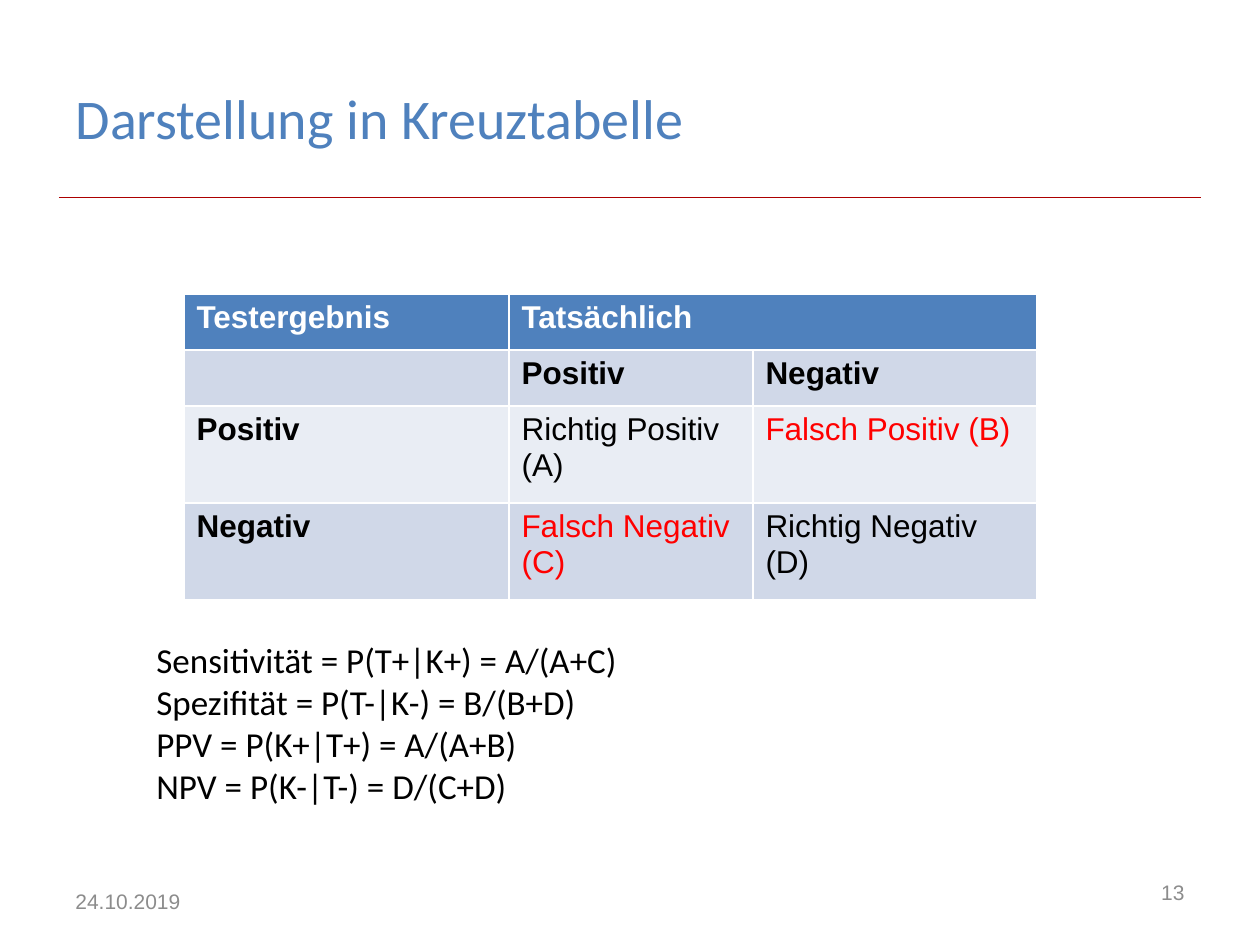
from dataclasses import dataclass

from lxml.etree import SubElement
from pptx import Presentation
from pptx.dml.color import RGBColor as Color
from pptx.enum.shapes import MSO_CONNECTOR as Connector
from pptx.enum.text import MSO_ANCHOR as Anchor, MSO_AUTO_SIZE as AutoSize, PP_ALIGN as Align
from pptx.oxml.ns import qn
from pptx.util import Emu, Pt


@dataclass(frozen=True)
class Theme:
    """Colours, fonts and type sizes of the slide."""
    accent: str = "4F81BD"
    rule: str = "AC0000"
    muted: str = "8C8C8C"
    text: str = "000000"
    inverse: str = "FFFFFF"
    error: str = "FF0000"
    band_dark: str = "D0D8E8"
    band_light: str = "E9EDF4"
    heading_font: str = "Calibri"
    table_font: str = "Arial"
    title_size: int = 32
    formula_size: int = 20
    table_size: int = 18
    footer_size: int = 12
    rule_width: float = 0.25


def px(value):
    """Turn pixels at 126 to the inch into EMU."""
    return Emu(round(value * 914400 / 126))


class SlideBuilder:
    """Draws styled elements on the current slide."""

    def __init__(self, slide, theme):
        self.slide = slide
        self.theme = theme

    def format_text(self, text_frame, font, size, color, bold=False, align=Align.LEFT):
        """Style every run of a text frame."""
        for paragraph in text_frame.paragraphs:
            paragraph.alignment = align
            for run in paragraph.runs:
                run.font.name = font
                run.font.size = Pt(size)
                run.font.bold = bold
                run.font.color.rgb = Color.from_string(color)

    def title(self, text, left, top, width, height):
        """Place the title placeholder."""
        shape = self.slide.shapes.title
        shape.left, shape.top, shape.width, shape.height = map(px, (left, top, width, height))
        shape.text_frame.text = text
        shape.text_frame.vertical_anchor = Anchor.MIDDLE
        self.format_text(shape.text_frame, self.theme.heading_font,
                         self.theme.title_size, self.theme.accent)

    def rule(self, left, right, y):
        """Draw a thin horizontal line."""
        line = self.slide.shapes.add_connector(
            Connector.STRAIGHT, px(left), px(y), px(right), px(y))
        line.line.color.rgb = Color.from_string(self.theme.rule)
        line.line.width = Pt(self.theme.rule_width)
        SubElement(line._element.spPr, qn("a:effectLst"))

    def text_box(self, text, left, top, width, height, font, size, color,
                 align=Align.LEFT, anchor=Anchor.MIDDLE, auto_size=AutoSize.NONE):
        """Add a wrapped text box."""
        box = self.slide.shapes.add_textbox(px(left), px(top), px(width), px(height))
        text_frame = box.text_frame
        text_frame.word_wrap = True
        text_frame.auto_size = auto_size
        text_frame.vertical_anchor = anchor
        text_frame.text = text
        self.format_text(text_frame, font, size, color, align=align)

    def footer(self, text, left, top, width, height, align=Align.LEFT):
        """Add a small muted footer text."""
        self.text_box(text, left, top, width, height, self.theme.table_font,
                      self.theme.footer_size, self.theme.muted, align)

    def cross_table(self, rows, left, top, widths, heights):
        """Add the cross table with its merged header."""
        theme = self.theme
        table = self.slide.shapes.add_table(
            len(heights), len(widths), px(left), px(top),
            px(sum(widths)), px(sum(heights))).table
        for column, width in zip(table.columns, widths):
            column.width = px(width)
        for row, height in zip(table.rows, heights):
            row.height = px(height)
        table.cell(0, 1).merge(table.cell(0, len(widths) - 1))
        fills = (theme.accent, theme.band_dark, theme.band_light, theme.band_dark)
        for row_index, (texts, fill) in enumerate(zip(rows, fills)):
            for column_index, text in enumerate(texts):
                cell = table.cell(row_index, column_index)
                cell.fill.solid()
                cell.fill.fore_color.rgb = Color.from_string(fill)
                cell.text_frame.text = text
                if row_index == 0:
                    color = theme.inverse
                else:
                    color = theme.error if text.startswith("Falsch") else theme.text
                self.format_text(cell.text_frame, theme.table_font, theme.table_size, color,
                                 bold=row_index < 2 or column_index == 0)


def main():
    """Build and save the slide."""
    theme = Theme()
    presentation = Presentation()
    presentation.slide_width, presentation.slide_height = px(1260), px(945)
    slide = presentation.slides.add_slide(presentation.slide_layouts[5])
    builder = SlideBuilder(slide, theme)

    builder.rule(59, 1201, 197)
    builder.title("Darstellung in Kreuztabelle", 63, 38, 853, 158)
    builder.footer("24.10.2019", 63, 876, 294, 50)
    builder.footer("13", 903, 861, 294, 63, Align.RIGHT)
    builder.cross_table(
        [
            ("Testergebnis", "Tatsächlich", ""),
            ("", "Positiv", "Negativ"),
            ("Positiv", "Richtig Positiv (A)", "Falsch Positiv (B)"),
            ("Negativ", "Falsch Negativ (C)", "Richtig Negativ (D)"),
        ],
        184, 294, widths=(325, 244, 284), heights=(56, 56, 97, 97))
    formulas = (
        "Sensitivität = P(T+|K+) = A/(A+C)",
        "Spezifität = P(T-|K-) = B/(B+D)",
        "PPV = P(K+|T+) = A/(A+B)",
        "NPV = P(K-|T-) = D/(C+D)",
    )
    builder.text_box("\n".join(formulas), 144, 632, 1022, 182, theme.heading_font,
                     theme.formula_size, theme.text, anchor=Anchor.TOP,
                     auto_size=AutoSize.SHAPE_TO_FIT_TEXT)
    presentation.save("out.pptx")


if __name__ == "__main__":
    main()
